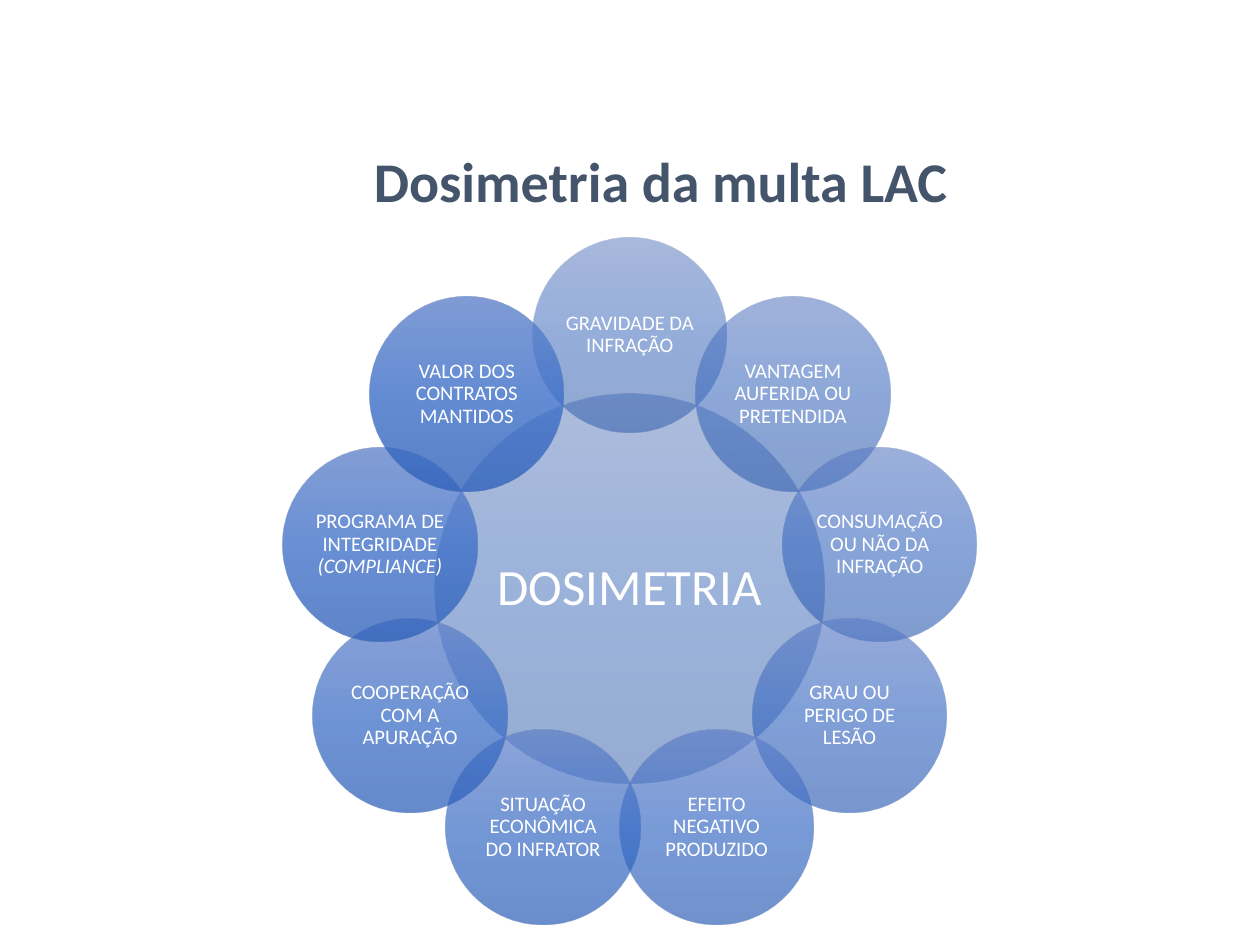
from math import cos, radians, sin

from lxml import etree
from pptx import Presentation
from pptx import util as u
from pptx.enum import shapes, text
from pptx.dml.color import RGBColor
from pptx.oxml.ns import qn

PX = 9144  # one px is 1/100 inch
FONT = "Calibri"
COLORS = {"title": "44546A", "label": "FFFFFF"}

TITLE = "Dosimetria da multa LAC"
# Label, italic ending, opacity in %, gradient from top to bottom
HUB = ("DOSIMETRIA", "", 50, "5C7ABD 3866B8 2D59A8")
PETALS = [  # clockwise from the top
    ("GRAVIDADE DA INFRAÇÃO", "", 53, "5C7BBF 3867BA 2D5AAB"),
    ("VANTAGEM AUFERIDA OU PRETENDIDA", "", 57, "5C7BC1 3868BD 2D5BAD"),
    ("CONSUMAÇÃO OU NÃO DA INFRAÇÃO", "", 60, "5C7CC4 3969C0 2D5CB0"),
    ("GRAU OU PERIGO DE LESÃO", "", 63, "5D7DC6 396AC2 2D5DB2"),
    ("EFEITO NEGATIVO PRODUZIDO", "", 67, "5E7FC7 396BC5 2D5EB5"),
    ("SITUAÇÃO ECONÔMICA DO INFRATOR", "", 70, "5F80C8 3A6DC7 2D5FB7"),
    ("COOPERAÇÃO COM A APURAÇÃO", "", 73, "6081C9 3C6EC8 2E60B9"),
    ("PROGRAMA DE INTEGRIDADE ", "(COMPLIANCE)", 77, "6182CA 3E70C9 3061BA"),
    ("VALOR DOS CONTRATOS MANTIDOS", "", 80, "6284CB 3F71CA 3163BB"),
]
MID_X, MID_Y = 551, 515
ORBIT = 222
HUB_SIZE, PETAL_SIZE = 341, 170


def shade(shape, stops, alpha):
    """Fill a shape with an evenly spaced, see-through vertical gradient."""
    grad = etree.Element(qn("a:gradFill"), rotWithShape="1")
    row = etree.SubElement(grad, qn("a:gsLst"))
    for i, tone in enumerate(stops):
        stop = etree.SubElement(row, qn("a:gs"), pos=str(i * 50000))
        color = etree.SubElement(stop, qn("a:srgbClr"), val=tone)
        etree.SubElement(color, qn("a:alpha"), val=str(alpha * 1000))
    etree.SubElement(grad, qn("a:lin"), ang="5400000", scaled="0")
    shape._element.spPr.find(qn("a:prstGeom")).addnext(grad)


def style(para, size, color):
    para.font.name = FONT
    para.font.size = u.Pt(size)
    para.font.color.rgb = RGBColor.from_string(COLORS[color])


def circle(slide, item, x, y, size, points, inset):
    """Draw one labelled circle centred on x, y."""
    label, ending, alpha, tones = item
    left, top = x - size / 2, y - size / 2
    disc = slide.shapes.add_shape(
        shapes.MSO_SHAPE.OVAL, *(round(v * PX) for v in (left, top, size, size)))
    disc.shadow.inherit = False
    disc.line.fill.background()
    shade(disc, tones.split(), alpha)

    frame = disc.text_frame
    frame.word_wrap = True
    frame.vertical_anchor = text.MSO_ANCHOR.MIDDLE
    frame.margin_left = frame.margin_right = inset * PX
    frame.margin_top = frame.margin_bottom = inset * PX
    para = frame.paragraphs[0]
    para.alignment = text.PP_ALIGN.CENTER
    para.line_spacing = 0.9
    para.add_run().text = label
    if ending:
        run = para.add_run()
        run.text = ending
        run.font.italic = True
    style(para, points, "label")


def head(slide):
    title = slide.shapes.title
    title.left, title.top, title.width, title.height = (
        v * PX for v in (317, 123, 992, 69))
    frame = title.text_frame
    frame.text = TITLE
    frame.word_wrap = True
    frame.auto_size = text.MSO_AUTO_SIZE.NONE
    frame.vertical_anchor = text.MSO_ANCHOR.TOP
    para = frame.paragraphs[0]
    para.alignment = text.PP_ALIGN.JUSTIFY
    para.font.bold = True
    style(para, 35.3, "title")


def main():
    deck = Presentation()
    deck.slide_width = u.Cm(28)
    deck.slide_height = u.Cm(21)
    slide = deck.slides.add_slide(deck.slide_layouts.get_by_name("Title Only"))
    head(slide)
    circle(slide, HUB, MID_X, MID_Y, HUB_SIZE, 32, 4)
    for i, item in enumerate(PETALS):
        turn = radians(i * 360 / len(PETALS))
        x, y = MID_X + ORBIT * sin(turn), MID_Y - ORBIT * cos(turn)
        circle(slide, item, x, y, PETAL_SIZE, 13, 2)
    deck.save("out.pptx")


if __name__ == "__main__":
    main()
